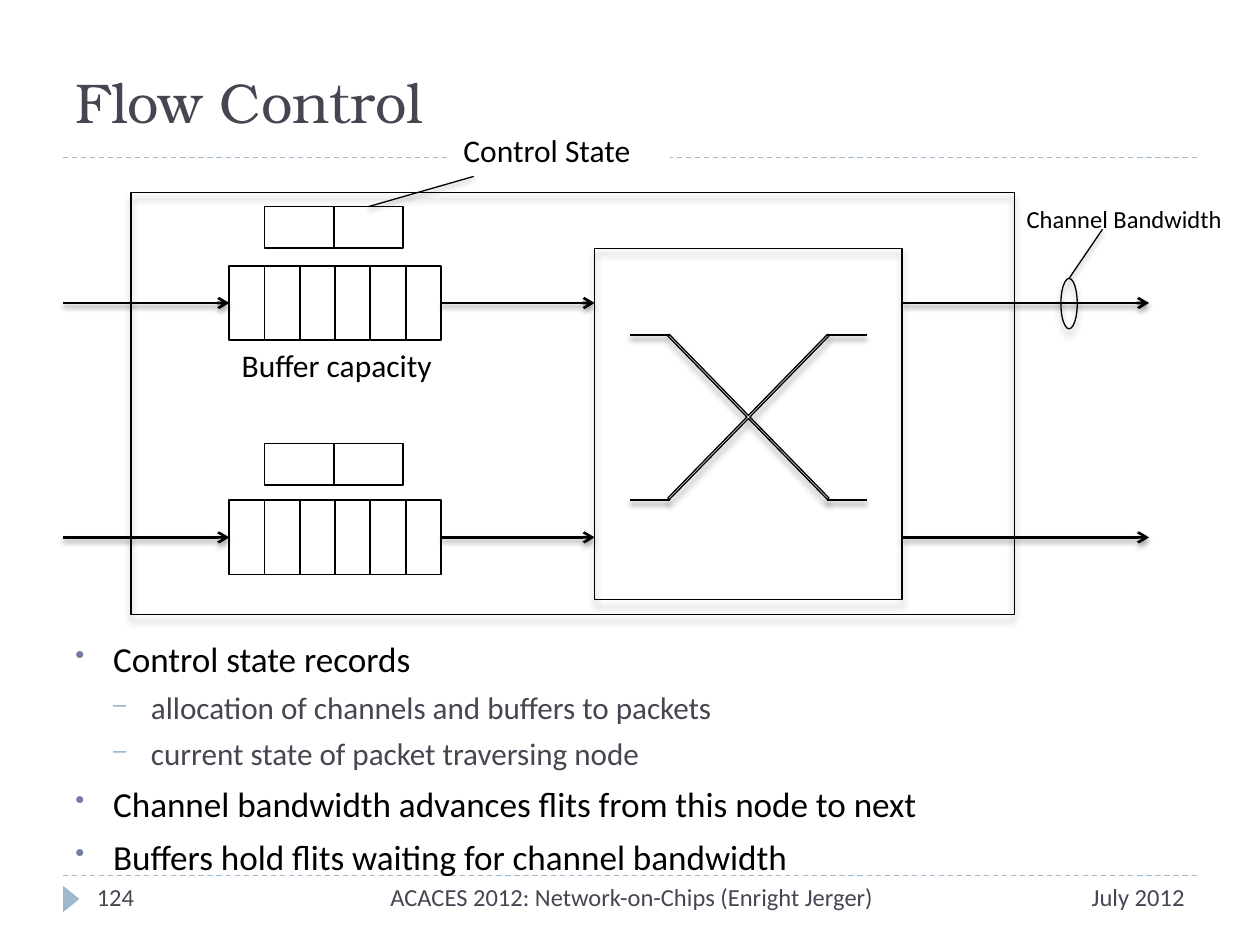
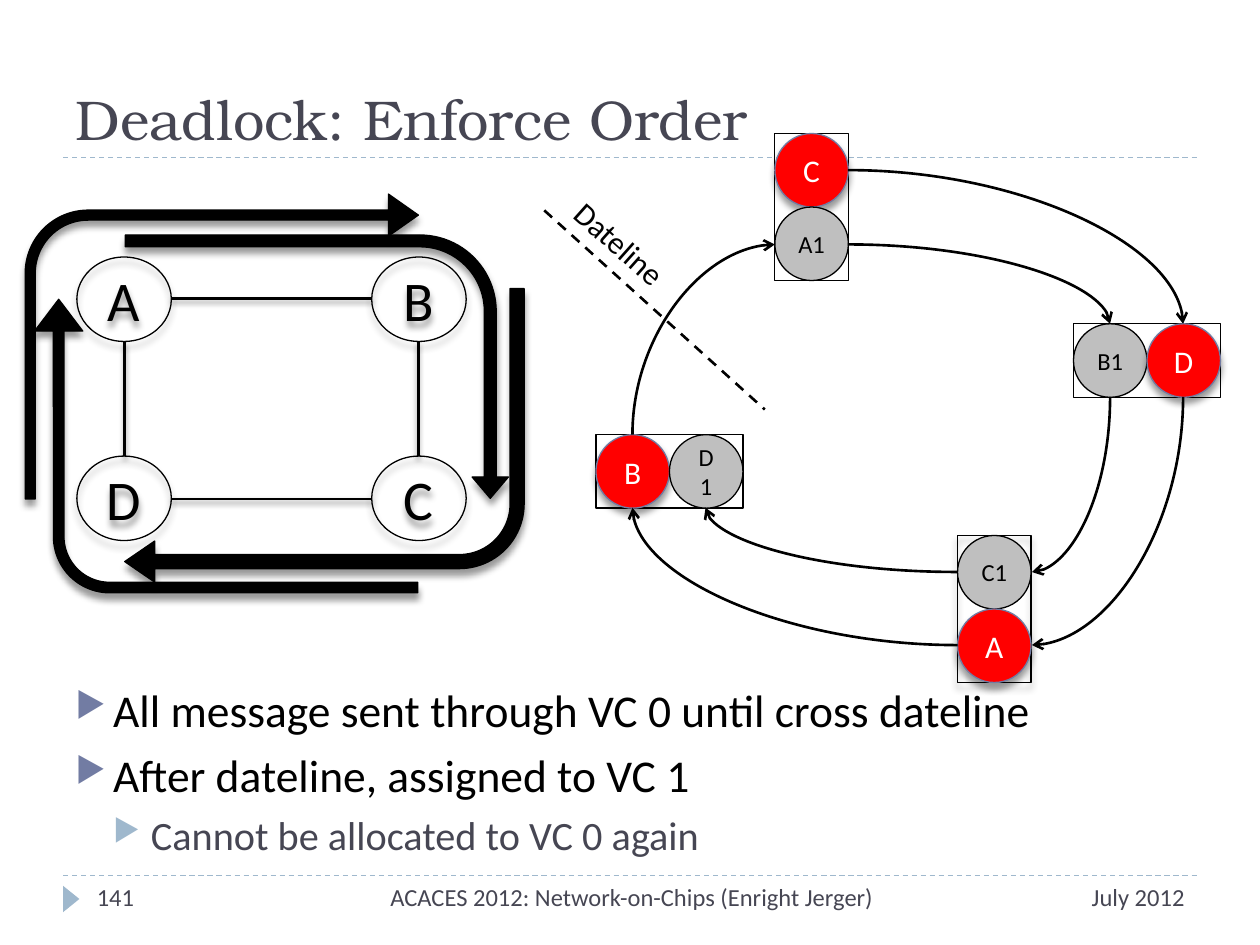
import itertools

import pptx
import pptx.dml.color
import pptx.enum.dml
import pptx.enum.shapes
import pptx.enum.text
import pptx.oxml
import pptx.oxml.ns
import pptx.util
from lxml import etree

Inches = pptx.util.Inches
Pt = pptx.util.Pt
RGBColor = pptx.dml.color.RGBColor
PRESET = pptx.enum.shapes.MSO_SHAPE
CONNECTOR = pptx.enum.shapes.MSO_CONNECTOR
ALIGN = pptx.enum.text.PP_ALIGN
ANCHOR = pptx.enum.text.MSO_ANCHOR
qn = pptx.oxml.ns.qn


class Theme:
    black, white, grey, red = "000000", "FFFFFF", "BFBFBF", "FF0000"
    slate, violet, pale_blue = "464653", "727CA3", "9FB8CD"
    title_font, body_font = "TeX Gyre Bonum", "Calibri"
    title, label, small = 32, 18, 14
    thin, cell, thick = 0.75, 1, 1.5
    shape_shadow = (4, 3.4)
    line_shadow = (3, 2)


EFFECTS = f'<a:effectLst {pptx.oxml.ns.nsdecls("a")}>%s</a:effectLst>'
SHADOW = (
    '<a:outerShdw blurRad="%d" dist="%d" dir="5400000" rotWithShape="0">'
    '<a:srgbClr val="000000"><a:alpha val="40000"/></a:srgbClr></a:outerShdw>'
)


def draw(slide, box, preset=None, fill=None, line=None, width=Theme.thin, shadow=None,
         rotation=0, adjustments=(), text="", size=Theme.label, color=Theme.black,
         font=Theme.body_font, align=ALIGN.LEFT, anchor=ANCHOR.TOP):
    """Add a preset shape, or a text box when no preset is given; box is in inches."""
    frame = [Inches(length) for length in box]
    if preset is None:
        shape = slide.shapes.add_textbox(*frame)
    else:
        shape = slide.shapes.add_shape(preset, *frame)
        for index, value in enumerate(adjustments):
            shape.adjustments[index] = value
    shape.rotation = rotation
    if fill:
        shape.fill.solid()
        shape.fill.fore_color.rgb = RGBColor.from_string(fill)
    else:
        shape.fill.background()
    if line:
        shape.line.color.rgb = RGBColor.from_string(line)
        shape.line.width = Pt(width)
    else:
        shape.line.fill.background()
    effect = SHADOW % tuple(Pt(length) for length in shadow) if shadow else ""
    shape._element.spPr.append(pptx.oxml.parse_xml(EFFECTS % effect))

    text_frame = shape.text_frame
    text_frame.word_wrap = True
    text_frame.vertical_anchor = anchor
    text_frame.text = text
    for paragraph in text_frame.paragraphs:
        paragraph.alignment = align
        for run in paragraph.runs:
            run.font.name = font
            run.font.size = Pt(size)
            run.font.color.rgb = RGBColor.from_string(color)
    return shape


def connect(slide, start, end, color=Theme.black, width=Theme.thick, dashed=False,
            arrow=None, shadow=None, curved=False):
    """Add a connector; arrow is "headEnd" (at start) or "tailEnd" (at end).

    A curved one leaves start horizontally and reaches end vertically.
    """
    kind = CONNECTOR.CURVE if curved else CONNECTOR.STRAIGHT
    connector = slide.shapes.add_connector(kind, *(Inches(value) for value in (*start, *end)))
    properties = connector._element.spPr
    if curved:
        properties.find(qn("a:prstGeom")).set("prst", "curvedConnector2")
    connector.line.color.rgb = RGBColor.from_string(color)
    connector.line.width = Pt(width)
    if dashed:
        connector.line.dash_style = pptx.enum.dml.MSO_LINE.DASH
    if arrow:
        etree.SubElement(properties.find(qn("a:ln")), qn(f"a:{arrow}"), type="arrow")
    effect = SHADOW % tuple(Pt(length) for length in shadow) if shadow else ""
    properties.append(pptx.oxml.parse_xml(EFFECTS % effect))
    return connector


presentation = pptx.Presentation()
presentation.slide_width = Inches(10)
presentation.slide_height = Inches(7.5)

# Shared frame: rules, title, footer and bullets (level, text)
pages = [
    {
        "title": "Flow Control", "title_box": (0.5, 0.13, 9, 0.99), "number": "124",
        "body_box": (0.5, 5.01, 9, 1.74), "sizes": (20.1, 17.8), "marks": "•–",
        "bullets": [
            (0, "Control state records"),
            (1, "allocation of channels and buffers to packets"),
            (1, "current state of packet traversing node"),
            (0, "Channel bandwidth advances flits from this node to next"),
            (0, "Buffers hold flits waiting for channel bandwidth"),
        ],
    },
    {
        "title": "Deadlock: Enforce Order", "title_box": (0.5, 0.17, 9, 1.08), "number": "141",
        "body_box": (0.5, 5.36, 9, 1.61), "sizes": (26, 23), "marks": "▶▶",
        "bullets": [
            (0, "All message sent through VC 0 until cross dateline"),
            (0, "After dateline, assigned to VC 1"),
            (1, "Cannot be allocated to VC 0 again"),
        ],
    },
]
for page in pages:
    slide = presentation.slides.add_slide(presentation.slide_layouts[6])
    for rule_y in (6.95, 1.25):
        connect(slide, (0.5, rule_y), (9.5, rule_y), Theme.pale_blue, Theme.thin, dashed=True)
    draw(slide, (0.46, 7.07, 0.21, 0.13), PRESET.ISOSCELES_TRIANGLE, Theme.pale_blue, rotation=90)
    draw(slide, page["title_box"], text=page["title"], size=Theme.title, color=Theme.slate,
         font=Theme.title_font, anchor=ANCHOR.BOTTOM)
    for left, width, align, text in (
        (8.2, 1.3, ALIGN.RIGHT, "July 2012"),
        (2.08, 5.87, ALIGN.CENTER, "ACACES 2012: Network-on-Chips (Enright Jerger)"),
        (0.67, 1.03, ALIGN.LEFT, page["number"]),
    ):
        draw(slide, (left, 6.95, width, 0.4), text=text, size=Theme.small,
             color=Theme.slate, align=align)

    body = draw(slide, page["body_box"], text="\n".join(text for _, text in page["bullets"]))
    for paragraph, (level, _) in zip(body.text_frame.paragraphs, page["bullets"]):
        paragraph.level = level
        paragraph.space_before = Pt((6, 5)[level])
        font = paragraph.runs[0].font
        font.size = Pt(page["sizes"][level])
        font.color.rgb = RGBColor.from_string((Theme.black, Theme.slate)[level])
        properties = paragraph._p.get_or_add_pPr()
        properties.set("marL", str(Inches(0.3 * (level + 1))))
        properties.set("indent", str(Inches(-0.3)))
        bullet_color = etree.SubElement(properties, qn("a:buClr"))
        etree.SubElement(bullet_color, qn("a:srgbClr"), val=(Theme.violet, Theme.pale_blue)[level])
        etree.SubElement(properties, qn("a:buSzPct"), val="76000")
        etree.SubElement(properties, qn("a:buChar"), char=page["marks"][level])

flow_slide, deadlock_slide = presentation.slides

# Flow control: router with two input ports, crossbar and two output channels
outlined = {"line": Theme.black, "shadow": Theme.shape_shadow}
arrow_line = {"arrow": "tailEnd", "shadow": Theme.line_shadow}
buffer_width, buffer_height, state_width = 0.28, 0.59, 0.55
control_states = []
for state_top, buffer_top in ((1.64, 2.11), (3.52, 3.97)):
    buffers = [
        draw(flow_slide, (1.82 + slot * buffer_width, buffer_top, buffer_width, buffer_height),
             PRESET.RECTANGLE, line=Theme.black, width=Theme.cell)
        for slot in range(6)
    ]
    control_states += [
        draw(flow_slide, (2.1 + slot * state_width, state_top, state_width, 0.33),
             PRESET.RECTANGLE, line=Theme.black, width=Theme.cell)
        for slot in range(2)
    ]
    channel_y = buffer_top + buffer_height / 2
    connect(flow_slide, (0.5, channel_y), (1.82, channel_y), **arrow_line).end_connect(buffers[0], 1)
    connect(flow_slide, (3.5, channel_y), (4.72, channel_y), **arrow_line).begin_connect(buffers[-1], 3)
    connect(flow_slide, (7.17, channel_y), (9.12, channel_y), **arrow_line)

draw(flow_slide, (4.72, 2.06, 2.44, 2.5), PRESET.MATH_MULTIPLY, adjustments=[0.007], **outlined)
for stub_left, stub_y in itertools.product((5, 6.56), (2.66, 3.97)):
    connect(flow_slide, (stub_left, stub_y), (stub_left + 0.32, stub_y), shadow=Theme.line_shadow)
draw(flow_slide, (4.72, 1.97, 2.44, 2.79), PRESET.RECTANGLE, **outlined)
draw(flow_slide, (1.04, 1.53, 7.01, 3.35), PRESET.RECTANGLE, **outlined)
channel_ring = draw(flow_slide, (8.42, 2.21, 0.13, 0.4), PRESET.OVAL, **outlined)

for target, start, end in (
    (control_states[1], (2.92, 1.64), (3.76, 1.4)),
    (channel_ring, (8.49, 2.21), (8.75, 1.82)),
):
    pointer = connect(flow_slide, start, end, width=Theme.thin, shadow=Theme.line_shadow)
    pointer.begin_connect(target, 0)
draw(flow_slide, (3.58, 0.99, 1.74, 0.4), PRESET.RECTANGLE, Theme.white, text="Control State")
draw(flow_slide, (1.82, 2.7, 2.11, 0.4), text="Buffer capacity")
draw(flow_slide, (8.05, 1.57, 1.9, 0.34), text="Channel Bandwidth", size=Theme.small)

# Deadlock, right: each router holds a VC 0 (red) and a VC 1 (grey) side by side
NODE = 7 / 12
centred = {"align": ALIGN.CENTER, "anchor": ANCHOR.MIDDLE}
routers = [  # left, top, stacked, channels in reading order, shadow
    (6.15, 1.06, True, ("C", "A1"), None),
    (8.52, 2.57, False, ("B1", "D"), None),
    (7.6, 4.25, True, ("C1", "A"), Theme.shape_shadow),
    (4.73, 3.45, False, ("B", "D1"), None),
]
for left, top, stacked, channels, shadow in routers:
    size = (NODE, 2 * NODE) if stacked else (2 * NODE, NODE)
    draw(deadlock_slide, (left, top, *size), PRESET.RECTANGLE, line=Theme.black, shadow=shadow)
    for position, name in enumerate(channels):
        offset = position * NODE
        box = (left, top + offset, NODE, NODE) if stacked else (left + offset, top, NODE, NODE)
        if name.endswith("1"):
            draw(deadlock_slide, box, PRESET.OVAL, Theme.grey, Theme.black,
                 text=name, size=Theme.small, **centred)
        else:
            draw(deadlock_slide, box, PRESET.OVAL, Theme.red, Theme.violet,
                 shadow=Theme.shape_shadow, text=name, color=Theme.white, **centred)

for start, end, arrow in (
    ((6.73, 1.35), (9.39, 2.57), "tailEnd"),
    ((8.19, 5.12), (9.39, 3.15), "headEnd"),
    ((7.6, 5.12), (5.02, 4.03), "tailEnd"),
    ((6.15, 1.94), (5.02, 3.45), "headEnd"),
    ((6.73, 1.94), (8.81, 2.57), "tailEnd"),
    ((8.19, 4.54), (8.81, 3.15), "headEnd"),
    ((7.6, 4.54), (5.6, 4.03), "tailEnd"),
):
    connect(deadlock_slide, start, end, arrow=arrow, curved=True)
connect(deadlock_slide, (4.32, 1.67), (6.07, 3.25), dashed=True)
draw(deadlock_slide, (4.37, 1.8, 1.25, 0.4), rotation=41.7, text="Dateline")

# Deadlock, left: four nodes in a ring with the four turning messages
for name, left, top in (
    ("A", 0.61, 2.04), ("B", 2.95, 2.04), ("D", 0.61, 3.62), ("C", 2.95, 3.62),
):
    draw(deadlock_slide, (left, top, 0.75, 0.67), PRESET.OVAL, text=name,
         size=Theme.title, **outlined, **centred)
for row_y in (2.37, 3.96):
    connect(deadlock_slide, (1.36, row_y), (2.95, row_y), shadow=Theme.line_shadow)
for column_x in (0.99, 3.32):
    connect(deadlock_slide, (column_x, 2.71), (column_x, 3.62), shadow=Theme.line_shadow)

for box, rotation, adjustments in (
    ((0.63, 2.02, 2.33, 3.04), 270, (0.036, 0.082, 0.108, 0.192)),
    ((0.2, 1.54, 3.12, 2.42), 0, (0.033, 0.069, 0.098, 0.207)),
    ((1.47, 1.39, 2.09, 3.04), 90, (0.045, 0.069, 0.081, 0.29)),
    ((0.99, 2.29, 3.17, 2.33), 180, (0.048, 0.07, 0.102, 0.221)),
):
    draw(deadlock_slide, box, PRESET.BENT_ARROW, Theme.black, rotation=rotation,
         adjustments=adjustments, **outlined)

presentation.save("out.pptx")
